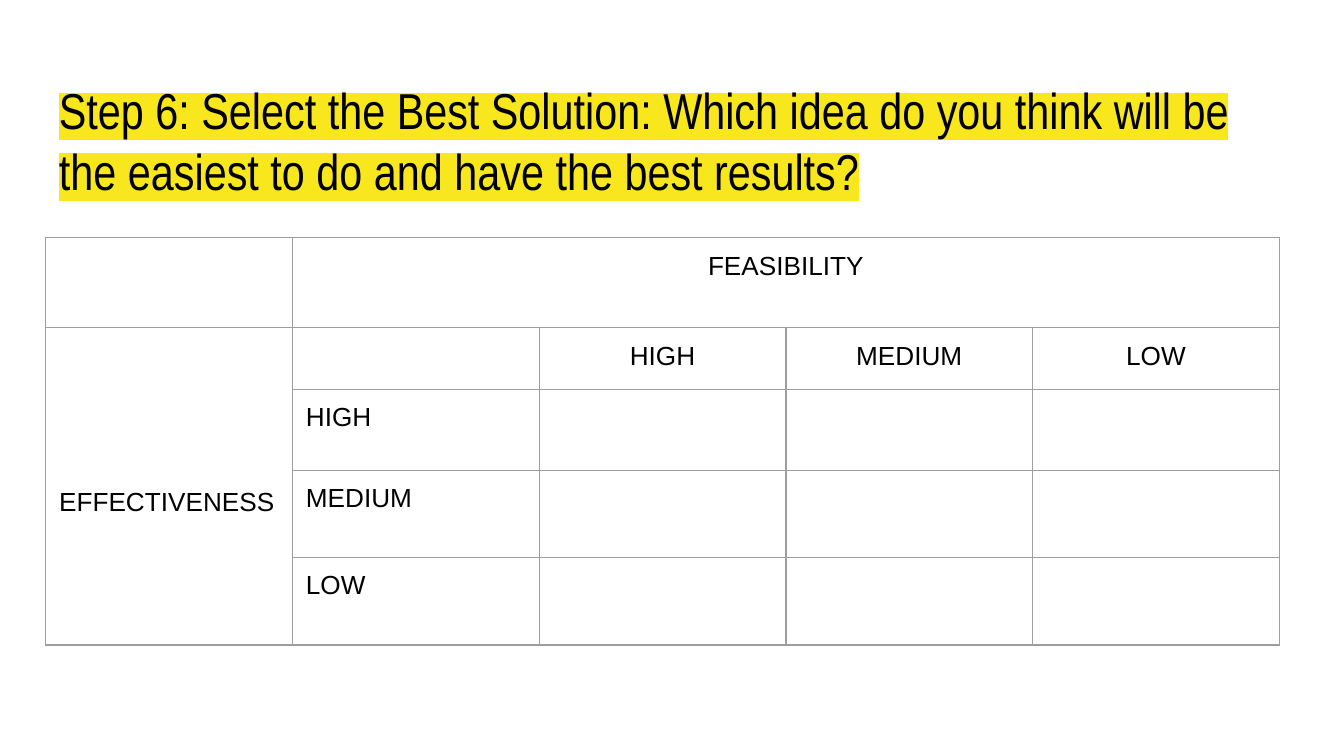
import pptx
import pptx.util
import pptx.dml.color
import pptx.enum.text
import pptx.oxml

Inches = pptx.util.Inches
Pt = pptx.util.Pt
align = pptx.enum.text.PP_ALIGN
anchor = pptx.enum.text.MSO_ANCHOR
ns = 'xmlns:a="http://schemas.openxmlformats.org/drawingml/2006/main"'


def color(code):
    return pptx.dml.color.RGBColor.from_string(code)


def add_xml(parent, xml):
    parent.append(pptx.oxml.parse_xml(xml))


# Wide slide, 16 to 9
deck = pptx.Presentation()
deck.slide_width = Inches(10)
deck.slide_height = Inches(10 * 9 / 16)
slide = deck.slides.add_slide(deck.slide_layouts[6])

# Highlighted title
title = slide.shapes.add_textbox(Inches(0.34), Inches(0.49), Inches(9.32), Inches(1.02))
frame = title.text_frame
frame.word_wrap = True
frame.margin_left = frame.margin_right = Inches(0.1)
frame.margin_top = frame.margin_bottom = Inches(0.1)
frame.text = ("Step 6: Select the Best Solution: Which idea do you think will be "
              "the easiest to do and have the best results?")
run = frame.paragraphs[0].runs[0]
run.font.size = Pt(27)
run.font.color.rgb = color("000000")
add_xml(run.font._element, f'<a:highlight {ns}><a:srgbClr val="F8E71C"/></a:highlight>')
run.font.name = "Arial Narrow"

# Decision matrix
heights = [0.67, 0.46, 0.6, 0.65, 0.65]
table = slide.shapes.add_table(5, 5, Inches(0.34), Inches(1.77),
                               Inches(9.18), Inches(sum(heights))).table
table.first_row = False
table.horz_banding = False
for col in table.columns:
    col.width = Inches(9.18 / 5)
for row, height in zip(table.rows, heights):
    row.height = Inches(height)
table.cell(0, 1).merge(table.cell(0, 4))
table.cell(1, 0).merge(table.cell(4, 0))

# Cell borders, without fill
for cell in table.iter_cells():
    props = cell._tc.get_or_add_tcPr()
    for side in ("lnL", "lnR", "lnT", "lnB"):
        add_xml(props, f'<a:{side} {ns} w="9525"><a:solidFill>'
                       f'<a:srgbClr val="9E9E9E"/></a:solidFill></a:{side}>')
    cell.fill.background()

# Headings by row and column
labels = {(0, 1): "FEASIBILITY", (1, 0): "EFFECTIVENESS"}
for step, level in enumerate(["HIGH", "MEDIUM", "LOW"], 2):
    labels[1, step] = level
    labels[step, 1] = level
for (row, col), label in labels.items():
    cell = table.cell(row, col)
    cell.margin_left = cell.margin_right = Inches(0.1)
    cell.margin_top = cell.margin_bottom = Inches(0.1)
    cell.text_frame.text = label
    para = cell.text_frame.paragraphs[0]
    para.alignment = align.CENTER if row < 2 and col > 0 else align.LEFT
    font = para.runs[0].font
    font.size = Pt(14)
    font.name = "Arial"
    font.color.rgb = color("000000")

# The side heading sits just below the middle of its cell
side = table.cell(1, 0)
side.vertical_anchor = anchor.MIDDLE
side.margin_top = Inches(0.34)

deck.save("out.pptx")
